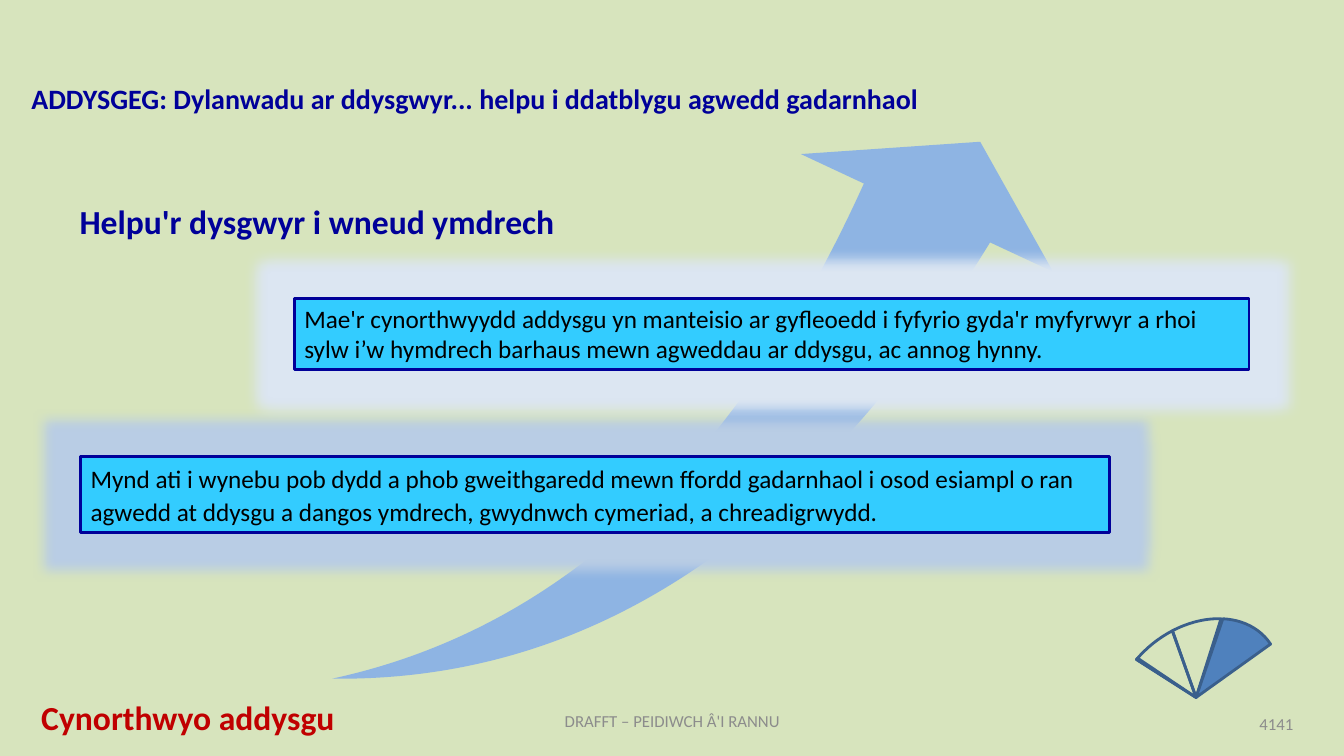
"""Build a slide on helping learners to make an effort."""
import pptx
import pptx.util
import pptx.dml.color
import pptx.enum.shapes
import pptx.enum.text
import pptx.oxml
import pptx.oxml.ns

Pt = pptx.util.Pt
SHAPE = pptx.enum.shapes.MSO_SHAPE
ALIGN = pptx.enum.text.PP_ALIGN
ANCHOR = pptx.enum.text.MSO_ANCHOR
WIDE, HIGH = pptx.util.Inches(13.33), pptx.util.Inches(7.5)
HUES = {
    "back": "D7E4BD", "arrow": "8EB4E3", "navy": "000099", "cyan": "33CCFF",
    "black": "000000", "red": "C00000", "gray": "8C8C8C", "edge": "3A5F8C",
    "blade": "4F81BD", "pale": "DCE6F2", "mist": "B9CDE5",
}


def hue(name):
    """Return a named colour."""
    return pptx.dml.color.RGBColor.from_string(HUES[name])


def place(x, y, w, h):
    """Turn percentages of the slide into lengths."""
    return [round(part * side / 100)
            for part, side in zip((x, y, w, h), (WIDE, HIGH, WIDE, HIGH))]


def write(shape, text, size, color, bold=False, align=ALIGN.LEFT, anchor=ANCHOR.TOP):
    """Write one styled paragraph and return it."""
    frame = shape.text_frame
    frame.word_wrap = True
    frame.auto_size = pptx.enum.text.MSO_AUTO_SIZE.NONE
    frame.vertical_anchor = anchor
    para = frame.paragraphs[0]
    para.text = text
    para.alignment = align
    font = para.font
    font.name, font.size, font.bold = "Calibri", Pt(size), bold
    font.color.rgb = hue(color)
    return para


def label(slide, box, text, size, color, **style):
    """Add a text box."""
    write(slide.shapes.add_textbox(*place(*box)), text, size, color, **style)


def draw(slide, kind, box, fill=None, line=None):
    """Add a flat preset shape."""
    shape = slide.shapes.add_shape(kind, *place(*box))
    shape.shadow.inherit = False
    if fill:
        shape.fill.solid()
        shape.fill.fore_color.rgb = hue(fill)
    else:
        shape.fill.background()
    if line:
        shape.line.color.rgb = hue(line)
        shape.line.width = Pt(2)
    else:
        shape.line.fill.background()
    return shape


def card(slide, box, glow, text):
    """Add a glowing text panel and return its paragraph."""
    shape = draw(slide, SHAPE.RECTANGLE, box, "cyan", "navy")
    ns = pptx.oxml.ns
    halo = pptx.oxml.parse_xml(
        f'<a:glow {ns.nsdecls("a")} rad="{Pt(18)}">'
        f'<a:srgbClr val="{HUES[glow]}"/></a:glow>')
    shape._element.spPr.find(ns.qn("a:effectLst")).append(halo)
    return write(shape, text, 18, "black")


def swoosh(slide):
    """Add the rising arrow."""
    shape = draw(slide, SHAPE.SWOOSH_ARROW, (26.1, 20, 53.25, 73.2), "arrow")
    shape._element.spPr.xfrm.set("flipV", "1")
    shape.rotation = 288.6


def fan(slide):
    """Add the fan of pie slices."""
    slices = [(96.94, 97.7, None), (96.81, 119.67, None),
              (119.57, 141.86, None), (142.61, 163.97, "blade")]
    for start, end, fill in slices:
        shape = draw(slide, SHAPE.PIE, (83.85, 80.13, 10.28, 24.27), fill, "edge")
        shape.rotation = 51.1
        shape.adjustments[0], shape.adjustments[1] = start, end


def main():
    """Build and save the slide."""
    deck = pptx.Presentation()
    deck.slide_width, deck.slide_height = WIDE, HIGH
    slide = deck.slides.add_slide(deck.slide_layouts[5])
    back = slide.background.fill
    back.solid()
    back.fore_color.rgb = hue("back")

    title = slide.shapes.title
    title.left, title.top, title.width, title.height = place(1.58, 10.13, 90.38, 5.87)
    write(title, "ADDYSGEG: Dylanwadu ar ddysgwyr... helpu i ddatblygu agwedd gadarnhaol",
          20, "navy", bold=True)
    swoosh(slide)
    label(slide, (5.18, 25.87, 61.8, 6.67), "Helpu'r dysgwyr i wneud ymdrech",
          24, "navy", bold=True)
    para = card(slide, (6, 60.4, 76.58, 10), "mist",
                "Mynd ati i wynebu pob dydd a phob gweithgaredd mewn ffordd gadarnhaol "
                "i osod esiampl o ran agwedd at ddysgu a dangos ymdrech, gwydnwch "
                "cymeriad, a chreadigrwydd.")
    para.line_spacing, para.space_after = 1.07, Pt(8)
    card(slide, (21.9, 39.47, 71.03, 9.47), "pale",
         "Mae'r cynorthwyydd addysgu yn manteisio ar gyfleoedd i fyfyrio gyda'r "
         "myfyrwyr a rhoi sylw i’w hymdrech barhaus mewn agweddau ar ddysgu, "
         "ac annog hynny.")
    label(slide, (92.85, 93.07, 4.13, 5.33), "4141", 12, "gray",
          align=ALIGN.RIGHT, anchor=ANCHOR.MIDDLE)
    fan(slide)
    label(slide, (2.33, 91.47, 35.93, 6.67), "Cynorthwyo addysgu", 24, "red", bold=True)
    label(slide, (34.2, 92.67, 31.65, 5.33), "DRAFFT – PEIDIWCH Â'I RANNU", 12, "gray",
          align=ALIGN.CENTER, anchor=ANCHOR.MIDDLE)
    deck.save("out.pptx")


if __name__ == "__main__":
    main()
